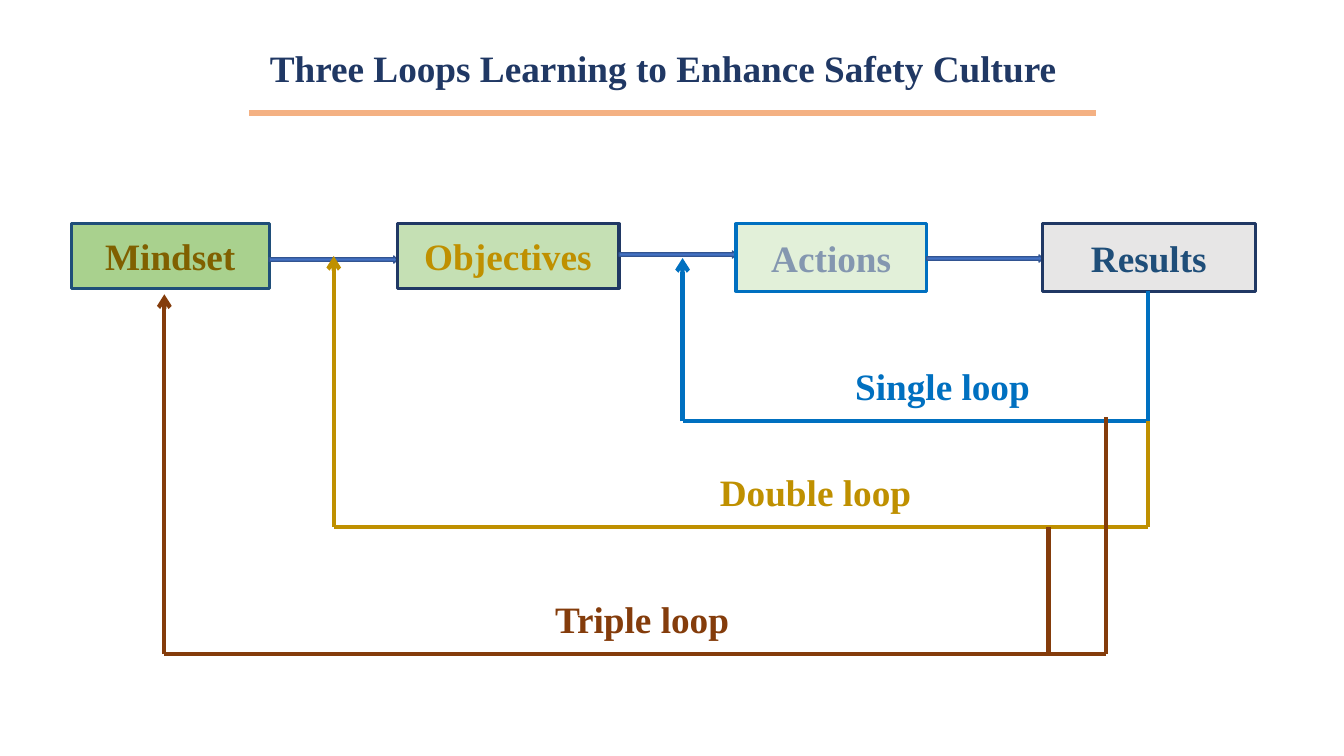
from pptx import Presentation
from pptx.dml.color import RGBColor
from pptx.enum.shapes import MSO_CONNECTOR, MSO_SHAPE
from pptx.enum.text import MSO_ANCHOR, MSO_AUTO_SIZE, PP_ALIGN
from pptx.oxml.ns import qn
from pptx.util import Inches, Pt
from lxml.etree import SubElement

COLORS = {
    "navy": "203864", "steel": "1F4E79", "blue": "0070C0", "gold": "BF9000",
    "brown": "843C0B", "olive": "806000", "slate": "8497B0", "peach": "F4B183",
    "green": "A9D18E", "light_green": "C5E0B4", "pale_green": "E2F0D9",
    "gray": "E7E6E6", "arrow": "4472C4", "arrow_edge": "325491",
}


def rgb(name):
    """Return the named palette colour."""
    return RGBColor.from_string(COLORS[name])


def write(shape, text, color):
    """Put one centred bold line of text in a shape."""
    tf = shape.text_frame
    tf.word_wrap = True
    tf.vertical_anchor = MSO_ANCHOR.MIDDLE
    p = tf.paragraphs[0]
    p.text = text
    p.alignment = PP_ALIGN.CENTER
    p.font.name = "Times New Roman"
    p.font.size = Pt(26.6)
    p.font.bold = True
    p.font.color.rgb = rgb(color)
    return tf


def add_line(slide, x1, y1, x2, y2, color, width=3, arrow=False):
    """Draw a straight line, with an optional arrowhead at its end."""
    line = slide.shapes.add_connector(
        MSO_CONNECTOR.STRAIGHT, Inches(x1), Inches(y1), Inches(x2), Inches(y2))
    line.line.color.rgb = rgb(color)
    line.line.width = Pt(width)
    if arrow:
        SubElement(line.line._get_or_add_ln(), qn("a:tailEnd"), type="arrow")
    SubElement(line._element.spPr, qn("a:effectLst"))


def add_block(slide, kind, left, top, width, height, fill, edge, weight):
    """Draw a filled and outlined preset shape."""
    sp = slide.shapes.add_shape(
        kind, Inches(left), Inches(top), Inches(width), Inches(height))
    sp.shadow.inherit = False
    sp.fill.solid()
    sp.fill.fore_color.rgb = rgb(fill)
    sp.line.color.rgb = rgb(edge)
    sp.line.width = Pt(weight)
    return sp


def add_title(slide, left, top, width, height):
    """Place the slide title and the rule beneath it."""
    add_line(slide, left + 0.95, top + 0.72, left + 9.35, top + 0.72, "peach", 4.5)
    title = slide.shapes.title
    title.left, title.top = Inches(left), Inches(top)
    title.width, title.height = Inches(width), Inches(height)
    tf = write(title, "Three Loops Learning to Enhance Safety Culture", "navy")
    tf.auto_size = MSO_AUTO_SIZE.NONE


def add_stages(slide, left, top):
    """Place the four stages in a row, joined by thin arrows."""
    stages = [
        ("Mindset", 0, 1.96, 0.64, "green", "steel", "olive", 0.32),
        ("Objectives", 3.23, 2.2, 0.64, "light_green", "navy", "gold", 0.27),
        ("Actions", 6.59, 1.89, 0.67, "pale_green", "blue", "slate", 0.31),
        ("Results", 9.63, 2.11, 0.67, "gray", "navy", "steel", None),
    ]
    for i, (text, x, width, height, fill, edge, color, drop) in enumerate(stages):
        sp = add_block(slide, MSO_SHAPE.RECTANGLE, left + x, top, width, height,
                       fill, edge, 2.25)
        write(sp, text, color)
        if drop is not None:
            end = x + width
            add_block(slide, MSO_SHAPE.RIGHT_ARROW, left + end, top + drop,
                      stages[i + 1][1] - end, 0.07, "arrow", "arrow_edge", 1)


def add_loop(slide, text, color, left, tip, base, risers, center):
    """Draw a feedback loop: risers down to a base line, then an arrow up."""
    for x, top in risers:
        add_line(slide, x, top, x, base, color)
    add_line(slide, left, base, max(x for x, _ in risers), base, color)
    add_line(slide, left, base, left, tip, color, arrow=True)
    width = 2.2
    label = slide.shapes.add_textbox(
        Inches(center - width / 2), Inches(base - 0.63), Inches(width), Inches(0.55))
    write(label, text, color).auto_size = MSO_AUTO_SIZE.SHAPE_TO_FIT_TEXT


def main():
    """Build and save the slide."""
    prs = Presentation()
    prs.slide_width, prs.slide_height = Inches(13.33), Inches(7.5)
    s = prs.slides.add_slide(prs.slide_layouts[5])
    add_title(s, 1.52, 0.4, 10.13, 0.55)
    add_stages(s, 0.71, 2.22)
    add_loop(s, "Single loop", "blue", 6.77, 2.56, 4.18, [(11.39, 2.89)], 9.35)
    add_loop(s, "Double loop", "gold", 3.31, 2.54, 5.23, [(11.39, 4.18)], 8.09)
    add_loop(s, "Triple loop", "brown", 1.63, 2.92, 6.49,
             [(10.4, 5.23), (10.97, 4.14)], 6.37)
    prs.save("out.pptx")


if __name__ == "__main__":
    main()
